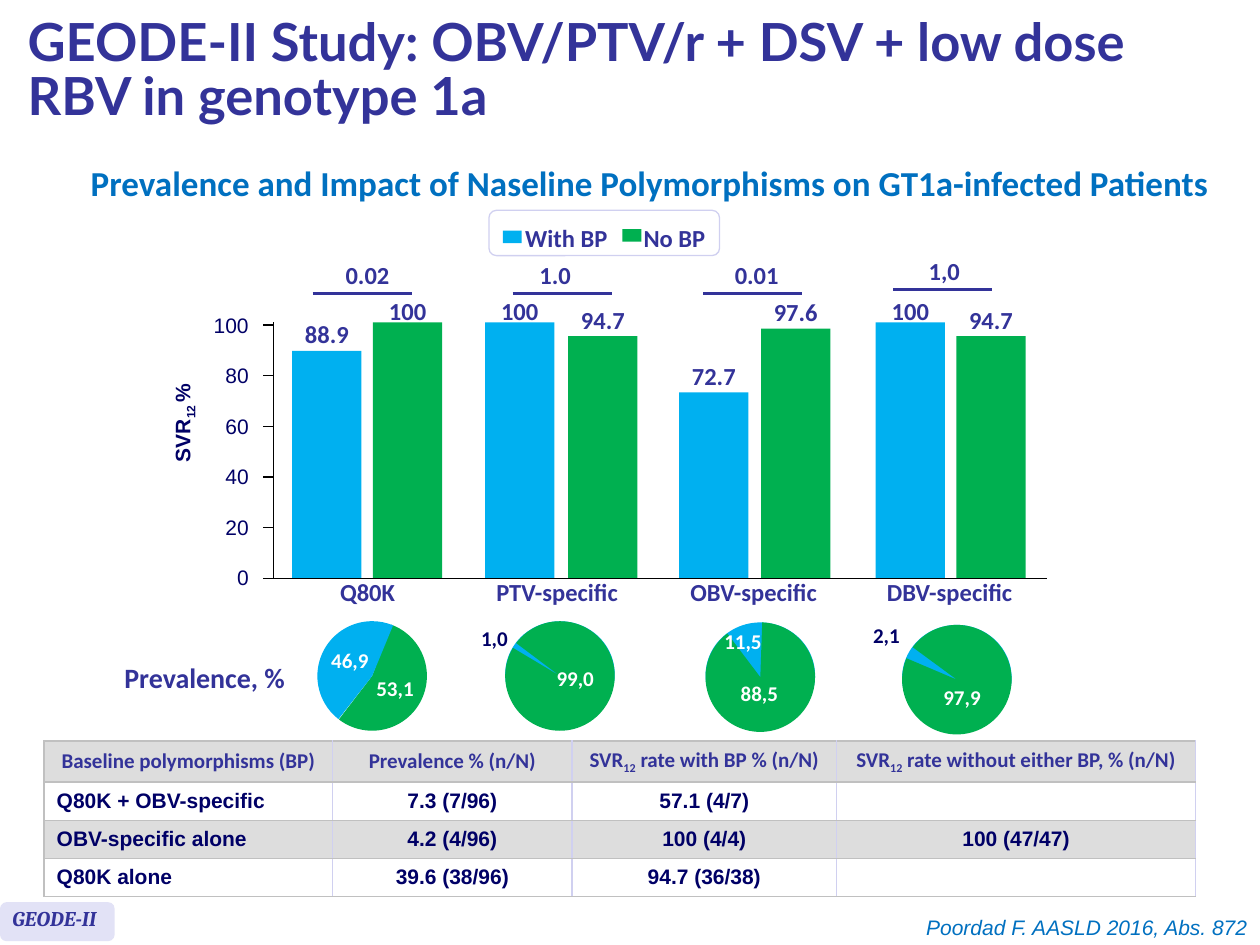
"""Build the GEODE-II slide on baseline polymorphisms, SVR12 and prevalence."""
from lxml import etree
from pptx import Presentation
from pptx.dml.color import RGBColor
from pptx.enum.shapes import MSO_CONNECTOR, MSO_SHAPE
from pptx.enum.text import MSO_ANCHOR, MSO_AUTO_SIZE, PP_ALIGN
from pptx.oxml.ns import qn
from pptx.util import Pt

LEFT, CENTER, RIGHT = PP_ALIGN.LEFT, PP_ALIGN.CENTER, PP_ALIGN.RIGHT
MIDDLE = MSO_ANCHOR.MIDDLE
FIT_SHAPE, NO_FIT = MSO_AUTO_SIZE.SHAPE_TO_FIT_TEXT, MSO_AUTO_SIZE.NONE
STRAIGHT = MSO_CONNECTOR.STRAIGHT
RECTANGLE, ROUNDED = MSO_SHAPE.RECTANGLE, MSO_SHAPE.ROUNDED_RECTANGLE
OVAL, PIE = MSO_SHAPE.OVAL, MSO_SHAPE.PIE

INDIGO = RGBColor(0x33, 0x33, 0x99)
NAVY = RGBColor(0x00, 0x00, 0x66)
BLUE = RGBColor(0x00, 0x70, 0xC0)
SKY = RGBColor(0x00, 0xB0, 0xF0)
GREEN = RGBColor(0x00, 0xB0, 0x50)
LAVENDER = RGBColor(0xE2, 0xE2, 0xF6)
LILAC = RGBColor(0xD0, 0xD0, 0xF0)
SILVER = RGBColor(0xC0, 0xC0, 0xC0)
GRAY = RGBColor(0xDD, 0xDD, 0xDD)
WHITE = RGBColor(0xFF, 0xFF, 0xFF)
BLACK = RGBColor(0x00, 0x00, 0x00)

TITLE = {"name": "Lato", "size": Pt(30), "bold": True, "color": INDIGO}
SUBTITLE = {"name": "Calibri", "size": Pt(20), "bold": True, "color": BLUE}
LABEL = {"name": "Calibri", "size": Pt(14), "bold": True, "color": INDIGO}
HEADING = {**LABEL, "size": Pt(16)}
HEADER = {**LABEL, "size": Pt(12)}
SHARE = {**HEADER, "color": WHITE}
SMALL_SHARE = {**HEADER, "color": NAVY}
TICK = {"name": "Arial", "size": Pt(12), "bold": False, "color": NAVY}
BODY = {**TICK, "bold": True}
CITATION = {**TICK, "italic": True, "color": BLUE}
TAG = {**HEADER, "name": "Cambria", "italic": True}


def write_text(frame, text, formats, alignment):
    """Write one paragraph; parts between bars are subscripts."""
    paragraph = frame.paragraphs[0]
    paragraph.alignment = alignment
    for index, part in enumerate(text.split("|")):
        run = paragraph.add_run()
        run.text = part
        for name, value in formats.items():
            if name == "color":
                run.font.color.rgb = value
            else:
                setattr(run.font, name, value)
        if index % 2:
            run._r.get_or_add_rPr().set("baseline", "-25000")


def add_block(kind, left, top, width, height, color):
    """Add a plain filled shape."""
    shape = slide.shapes.add_shape(kind, Pt(left), Pt(top), Pt(width), Pt(height))
    shape.shadow.inherit = False
    shape.fill.solid()
    shape.fill.fore_color.rgb = color
    shape.line.fill.background()
    return shape


presentation = Presentation()
presentation.slide_width, presentation.slide_height = Pt(720), Pt(540)
slide = presentation.slides.add_slide(presentation.slide_layouts[5])

title = slide.shapes.title
title.left, title.top, title.width, title.height = Pt(8.6), Pt(5.8), Pt(686), Pt(71.3)
title.text_frame.auto_size = NO_FIT
title.text_frame.vertical_anchor = MIDDLE
title.text_frame.paragraphs[0].line_spacing = 0.85
write_text(title.text_frame, "GEODE-II Study: OBV/PTV/r + DSV + low dose RBV in genotype 1a", TITLE, LEFT)

add_block(ROUNDED, 0, 515.5, 65.5, 22.3, LAVENDER)
legend = add_block(ROUNDED, 279.4, 120.2, 131.8, 25.9, WHITE)
legend.line.color.rgb = LILAC
legend.line.width = Pt(0.75)
add_block(RECTANGLE, 287.3, 131.8, 10.8, 7.2, SKY)
add_block(RECTANGLE, 355.7, 131, 10.8, 7.2, GREEN)

labels = [
    ("GEODE-II", 0, 514, 65.5, 21.6, TAG, LEFT),
    ("Poordad F. AASLD 2016, Abs. 872", 190, 519, 530, 21.6, CITATION, RIGHT),
    ("Prevalence and Impact of Naseline Polymorphisms on GT1a-infected Patients",
     31, 88.6, 680.4, 31.7, SUBTITLE, CENTER),
    ("With BP", 293, 123.8, 62, 20.9, LABEL, LEFT),
    ("No BP", 360.7, 123.8, 50.4, 20.9, LABEL, LEFT),
    ("Prevalence, %", 64, 373.7, 107.3, 26.6, HEADING, LEFT),
    ("46,9", 182.2, 366.5, 36, 21.6, SHARE, LEFT),
    ("53,1", 208, 382.3, 36, 21.6, SHARE, LEFT),
    ("1,0", 267.8, 354.2, 30.2, 21.6, SMALL_SHARE, LEFT),
    ("99,0", 311, 376.6, 36, 21.6, SHARE, LEFT),
    ("11,5", 406.8, 355.7, 36, 21.6, SHARE, LEFT),
    ("88,5", 416.2, 385.2, 36, 21.6, SHARE, LEFT),
    ("97,9", 532, 387.4, 36, 21.6, SHARE, LEFT),
    ("2,1", 491.8, 352, 30.2, 21.6, SMALL_SHARE, LEFT),
]
lines = [
    (156.2, 184.3, 156.2, 331, BLACK, 0.75),
    (150.5, 330.5, 598.3, 330.5, BLACK, 0.75),
]

for index, value in enumerate(range(100, -1, -20)):
    width = 14 + 6.9 * len(str(value))
    labels.append((str(value), 149.2 - width, 175 + 28.8 * index, width, 21.6, TICK, RIGHT))
    if value:
        tick_y = 185.8 + 28.9 * index
        lines.append((150.5, tick_y, 156.2, tick_y, BLACK, 0.75))

BASELINE, FULL_HEIGHT, BAR_WIDTH = 330.5, 146.2, 39.6
groups = [
    ("Q80K", 187.2, 46, ((167, 88.9, SKY), (213.1, 100, GREEN)), "0.02", 178.6, 210, 167.8),
    ("PTV-specific", 276.5, 85, ((277.2, 100, SKY), (324.7, 94.7, GREEN)), "1.0", 293, 317.2, 167.8),
    ("OBV-specific", 387.4, 87.8, ((388.1, 72.7, SKY), (434.9, 97.6, GREEN)), "0.01", 401.8, 432.4, 167.8),
    ("DBV-specific", 499.7, 87.8, ((500.4, 100, SKY), (546.5, 94.7, GREEN)), "1,0", 510.5, 539.6, 165.6),
]
for name, name_left, name_width, bars, p_value, bracket_left, p_center, bracket_y in groups:
    labels.append((name, name_left, 326.2, name_width, 24.5, LABEL, LEFT))
    labels.append((p_value, p_center - 19.8, bracket_y - 22.7, 39.6, 24.5, LABEL, CENTER))
    lines.append((bracket_left, bracket_y, bracket_left + 56.6, bracket_y, INDIGO, 1.5))
    for left, value, color in bars:
        height = FULL_HEIGHT * value / 100
        add_block(RECTANGLE, left, BASELINE - height, BAR_WIDTH, height, color)
        gap = 18.7 if value == 100 else 21.5
        labels.append((str(value), left, BASELINE - height - gap, BAR_WIDTH, 24.5, LABEL, CENTER))

DIAMETER = 62.6
for left, top in ((288.7, 355), (403.2, 355.7), (515.5, 357.1)):
    add_block(OVAL, left, top, DIAMETER, 60.5, SKY)
slices = [
    (181.4, 355, 290.2, 127.4, GREEN),
    (181.4, 355, 128, 292.5, SKY),
    (288.7, 355, 216.9, 210.9, GREEN),
    (403.2, 355.7, 272, 232.9, GREEN),
    (515.5, 357.1, 216.3, 203, GREEN),
]
for left, top, start, end, color in slices:
    pie = add_block(PIE, left, top, DIAMETER, DIAMETER, color)
    pie.adjustments[0], pie.adjustments[1] = start * 0.6, end * 0.6

for start_x, start_y, end_x, end_y, color, weight in lines:
    line = slide.shapes.add_connector(STRAIGHT, Pt(start_x), Pt(start_y), Pt(end_x), Pt(end_y))
    line.line.color.rgb = color
    line.line.width = Pt(weight)
    etree.SubElement(line._element.spPr, qn("a:effectLst"))

labels.append(("SVR|12 |%", 73.4, 231.8, 61.2, 21.6, BODY, RIGHT))
for text, left, top, width, height, formats, alignment in labels:
    box = slide.shapes.add_textbox(Pt(left), Pt(top), Pt(width), Pt(height))
    box.text_frame.word_wrap = formats in (CITATION, SUBTITLE, TAG)
    box.text_frame.auto_size = FIT_SHAPE
    write_text(box.text_frame, text, formats, alignment)
box.rotation = 270

rows = [
    ("Baseline polymorphisms (BP)", "Prevalence % (n/N)", "SVR|12| rate with BP % (n/N)",
     "SVR|12| rate without either BP, % (n/N)"),
    ("Q80K + OBV-specific", "7.3 (7/96)", "57.1 (4/7)", ""),
    ("OBV-specific alone", "4.2 (4/96)", "100 (4/4)", "100 (47/47)"),
    ("Q80K alone", "39.6 (38/96)", "94.7 (36/38)", ""),
]
table = slide.shapes.add_table(4, 4, Pt(25.2), Pt(423.4), Pt(658), Pt(87.2)).table
table.first_row = table.horz_banding = False
for column, width in zip(table.columns, (164.9, 136.8, 151.2, 205.1)):
    column.width = Pt(width)
for row_index, texts in enumerate(rows):
    table.rows[row_index].height = Pt(21.8)
    for column_index, text in enumerate(texts):
        cell = table.cell(row_index, column_index)
        cell.vertical_anchor = MIDDLE
        left_color = LILAC if column_index else SILVER
        borders = {"a:lnL": left_color, "a:lnR": LILAC, "a:lnT": SILVER, "a:lnB": SILVER}
        for tag, color in borders.items():
            border = etree.SubElement(cell._tc.get_or_add_tcPr(), qn(tag), w="12700")
            border_fill = etree.SubElement(border, qn("a:solidFill"))
            etree.SubElement(border_fill, qn("a:srgbClr"), val=str(color))
        cell.fill.solid()
        cell.fill.fore_color.rgb = WHITE if row_index % 2 else GRAY
        if text:
            alignment = LEFT if row_index and not column_index else CENTER
            write_text(cell.text_frame, text, BODY if row_index else HEADER, alignment)
        else:
            etree.SubElement(cell.text_frame.paragraphs[0]._p, qn("a:endParaRPr"), sz="1200")

presentation.save("out.pptx")
